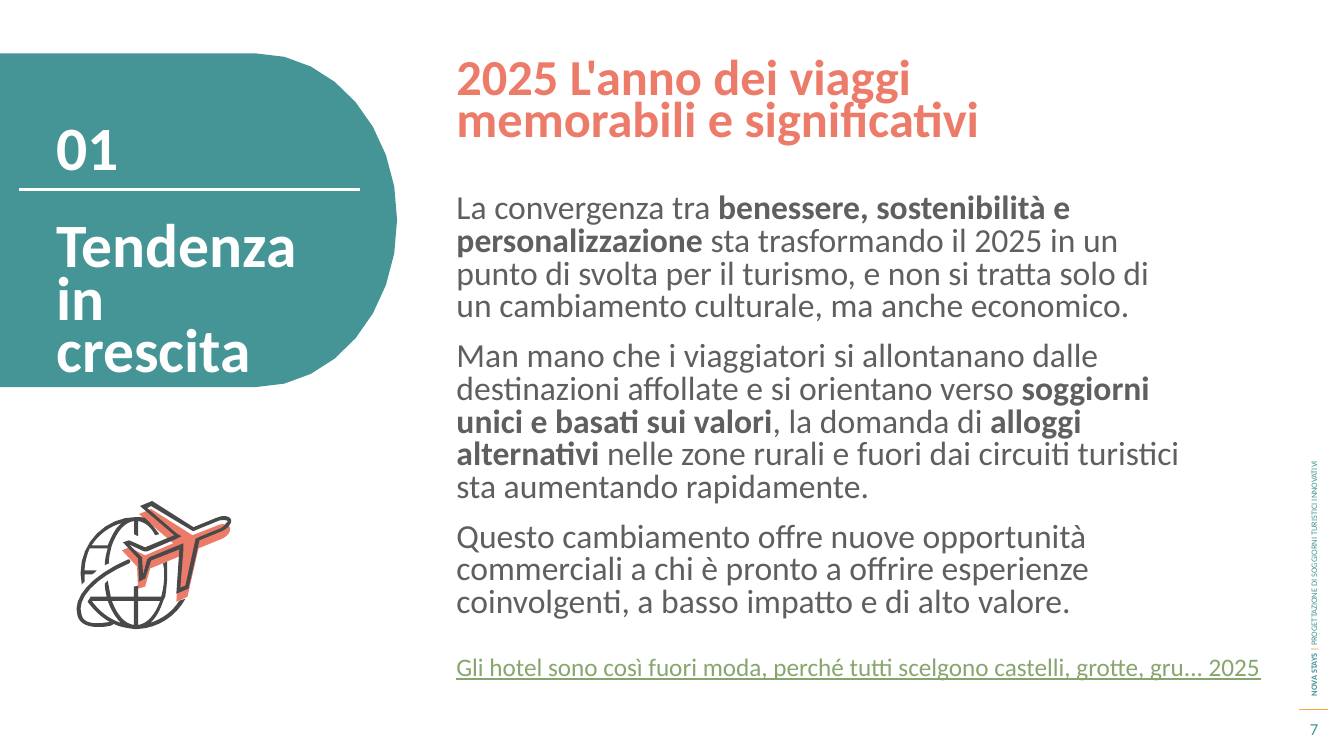
"""Build the slide on growing travel trends for 2025."""
import pptx
import pptx.util
import pptx.dml.color
import pptx.enum.shapes
import pptx.enum.text
from lxml import etree
from pptx.oxml.ns import qn

Cm, Pt = pptx.util.Cm, pptx.util.Pt
ALIGN, ANCHOR = pptx.enum.text.PP_ALIGN, pptx.enum.text.MSO_ANCHOR

TEAL, CORAL, GREY, DARK = "459597", "EC7C69", "5F5F5F", "494949"
WHITE, AMBER, GREEN = "FFFFFF", "FBA63B", "87A66E"
FONT = "Calibri"

HEADING = [[("2025 L'anno dei viaggi memorabili e significativi", True)]]
NUMBER = [[("01", True)]]
LABEL = [[("Tendenza in crescita", True)]]
BODY = [
    [("La convergenza tra ", False),
     ("benessere, sostenibilità e personalizzazione ", True),
     ("sta trasformando il 2025 in un punto di svolta per il turismo, e non si tratta "
      "solo di un cambiamento culturale, ma anche economico.", False)],
    [("Man mano che i viaggiatori si allontanano dalle destinazioni affollate e si "
      "orientano verso ", False),
     ("soggiorni unici e basati sui valori", True),
     (", la domanda di ", False),
     ("alloggi alternativi ", True),
     ("nelle zone rurali e fuori dai circuiti turistici sta aumentando rapidamente.", False)],
    [("Questo cambiamento offre nuove opportunità commerciali a chi è pronto a offrire "
      "esperienze coinvolgenti, a basso impatto e di alto valore.", False)],
]
SOURCE = [[("Gli hotel sono così fuori moda, perché tutti scelgono castelli, grotte, "
            "gru... 2025", False)]]
PAGE = [[("7", False)]]
SIDEBAR = [[("NOVA STAYS ", True), ("| ", True, AMBER),
            ("PROGETTAZIONE DI SOGGIORNI TURISTICI INNOVATIVI", False)]]

UNIT = 0.0254
PANEL = [
    "M 0 53 L 254 53 C 331 53 394 127 394 218 C 394 310 331 384 254 384 L 0 384 Z"]
PLANE_SHADOW = [
    "M 228 523 C 227 521 224 520 221 520 C 219 520 216 521 214 522 L 191 531 L 150 505",
    "L 138 510 L 172 539 L 144 551 L 128 543 L 121 546 L 136 562 L 137 584 L 144 582",
    "L 149 564 L 178 552 L 175 597 L 186 592 L 197 544 L 219 535 C 225 533 230 527 228 523 Z"]
GLOBE_TOP = [
    "M 121 519 C 115 523 111 531 107 541 L 91 541 C 98 530 109 522 121 519 Z",
    "M 84 577 C 84 574 84 572 84 570 L 91 570 C 93 569 94 568 96 566 L 84 566",
    "C 84 559 86 551 89 544 L 107 544 C 105 550 104 556 104 561 C 105 560 106 560 108 559",
    "C 108 554 109 549 110 545 L 111 541 C 116 527 124 518 133 517 L 133 530 L 137 532",
    "L 137 517 C 144 518 150 523 154 531 L 158 530 C 155 526 152 522 149 519 L 144 514",
    "C 141 513 138 513 135 513 C 105 513 80 538 80 568 C 80 572 81 576 81 580",
    "C 82 579 83 578 84 577 Z"]
GLOBE_BOTTOM = [
    "M 159 596 C 154 610 146 619 137 620 L 137 596 Z",
    "M 133 596 L 133 620 C 124 619 116 610 111 596 Z",
    "M 91 596 L 107 596 C 110 605 115 613 120 618 C 108 614 98 606 91 596 Z",
    "M 149 618 C 155 613 159 605 162 596 L 164 592 C 165 585 166 577 166 570 L 166 566",
    "C 166 563 166 560 166 557 L 162 559 C 162 561 163 564 163 566 L 163 570",
    "C 163 577 162 585 160 592 L 137 592 L 137 581 L 133 582 L 133 592 L 110 592",
    "C 109 587 108 582 107 576 C 106 577 105 578 104 579 C 104 583 105 588 106 592",
    "L 90 592 C 89 594 88 595 87 597 C 93 605 100 612 109 617 C 87 621 82 615 81 610",
    "C 75 594 95 573 128 559 C 129 558 130 557 129 556 C 129 555 128 555 127 555",
    "C 91 571 71 593 77 611 C 79 618 86 622 97 622 C 101 622 104 622 108 621",
    "C 110 621 111 620 113 619 C 119 622 126 623 133 624 C 134 624 136 624 137 624",
    "C 157 623 175 611 184 594 L 178 596 C 171 607 161 614 149 618 Z"]
PLANE_OUTLINE = [
    "M 224 520 C 223 521 221 523 219 524 L 197 533 L 195 534 L 194 535 L 184 581 L 179 583",
    "L 182 545 L 182 539 L 177 541 L 148 553 L 147 554 L 146 555 L 142 570 L 141 554",
    "L 141 553 L 140 552 L 128 540 L 143 547 L 144 547 L 146 547 L 174 535 L 180 532",
    "L 175 529 L 146 504 L 150 502 L 190 526 L 192 527 L 194 526 L 216 517",
    "C 218 516 220 516 222 516 C 223 516 225 516 226 517 C 226 517 226 518 224 519 Z",
    "M 229 515 C 228 513 225 512 222 512 C 219 512 217 513 214 514 L 192 523 L 151 497",
    "L 139 502 L 173 531 L 144 543 L 128 536 L 122 538 L 137 554 L 138 577 L 144 574",
    "L 150 556 L 178 545 L 175 589 L 187 584 L 198 536 L 220 527 C 225 525 231 519 229 515 Z"]
ICON = [(PLANE_SHADOW, CORAL), (GLOBE_TOP, DARK), (GLOBE_BOTTOM, DARK), (PLANE_OUTLINE, DARK)]


def rgb(value):
    return pptx.dml.color.RGBColor.from_string(value)


def contours(outline, steps=8):
    tokens = (token for row in outline for token in row.split())
    result = []

    def point():
        return tuple(float(next(tokens)) for _ in "xy")

    for command in tokens:
        if command == "M":
            result.append([point()])
        elif command == "L":
            result[-1].append(point())
        elif command == "C":
            a, b, c, d = result[-1][-1], point(), point(), point()
            for i in range(1, steps + 1):
                t = i / steps
                u = 1 - t
                result[-1].append(tuple(
                    u**3 * a[k] + 3 * u * u * t * b[k] + 3 * u * t * t * c[k] + t**3 * d[k]
                    for k in (0, 1)))
    return [[(Cm(x * UNIT), Cm(y * UNIT)) for x, y in pts] for pts in result]


def add_outline(shapes, outline, color):
    first, *others = contours(outline)
    fb = shapes.build_freeform(*first[0], scale=1.0)
    fb.add_line_segments(first[1:], close=True)
    for pts in others:
        fb.move_to(*pts[0])
        fb.add_line_segments(pts[1:], close=True)
    sp = fb.convert_to_shape()
    sp.shadow.inherit = False
    sp.fill.solid()
    sp.fill.fore_color.rgb = rgb(color)
    sp.line.fill.background()


def add_rule(s, x1, x2, y, color, width):
    line = s.shapes.add_connector(pptx.enum.shapes.MSO_CONNECTOR.STRAIGHT,
                                  Cm(x1), Cm(y), Cm(x2), Cm(y))
    line.line.color.rgb = rgb(color)
    line.line.width = Pt(width)
    etree.SubElement(line._element.spPr, qn("a:effectLst"))


def write(sp, box, paragraphs, size, color, leading=1.0, after=0, anchor=ANCHOR.TOP,
          align=ALIGN.LEFT, underline=False):
    sp.left, sp.top, sp.width, sp.height = (Cm(v) for v in box)
    tf = sp.text_frame
    tf.word_wrap = True
    tf.auto_size = pptx.enum.text.MSO_AUTO_SIZE.NONE
    tf.vertical_anchor = anchor
    for i, runs in enumerate(paragraphs):
        p = tf.add_paragraph() if i else tf.paragraphs[0]
        pPr = p._p.get_or_add_pPr()
        pPr.set("marL", "0")
        pPr.set("indent", "0")
        etree.SubElement(pPr, qn("a:buNone"))
        p.alignment, p.line_spacing = align, leading
        p.space_before, p.space_after = Pt(0), Pt(after)
        for text, bold, *own in runs:
            r = p.add_run()
            r.text = text
            r.font.name, r.font.size = FONT, Pt(size)
            r.font.bold, r.font.underline = bold, underline
            r.font.color.rgb = rgb(own[0] if own else color)


def main():
    prs = pptx.Presentation()
    prs.slide_width, prs.slide_height = Cm(33.87), Cm(19.05)
    s = prs.slides.add_slide(prs.slide_layouts[4])
    title, label, body, number, spare = s.placeholders
    spare._element.getparent().remove(spare._element)

    add_rule(s, 32.74, 33.48, 17.88, "FBA63D", 0.75)
    add_outline(s.shapes, PANEL, TEAL)
    add_rule(s, 0.48, 9.07, 4.78, WHITE, 1.75)
    icon = s.shapes.add_group_shape()
    for outline, color in ICON:
        add_outline(icon.shapes, outline, color)

    for sp in (label, number, body, title):
        s.shapes._spTree.append(sp._element)
    write(label, (1.17, 5.61, 6.86, 2.92), LABEL, 44, WHITE, Pt(37.4))
    write(number, (1.17, 2.62, 3.33, 1.07), NUMBER, 44, WHITE)
    write(body, (11.25, 4.75, 18.9, 10.49), BODY, 24, GREY, Pt(23.4), 12)
    write(title, (11.25, 1.5, 16.21, 2.24), HEADING, 36, CORAL, Pt(29.6))

    source, page, sidebar = (s.shapes.add_textbox(0, 0, 0, 0) for _ in range(3))
    write(source, (11.25, 16.28, 25.83, 1.02), SOURCE, 18, GREEN, underline=True)
    write(page, (32.46, 17.93, 1.32, 0.86), PAGE, 12, TEAL,
          anchor=ANCHOR.MIDDLE, align=ALIGN.CENTER)
    write(sidebar, (25.78, 10.21, 14.66, 0.51), SIDEBAR, 6, TEAL, anchor=ANCHOR.MIDDLE)
    sidebar.rotation = 270
    prs.save("out.pptx")


if __name__ == "__main__":
    main()
